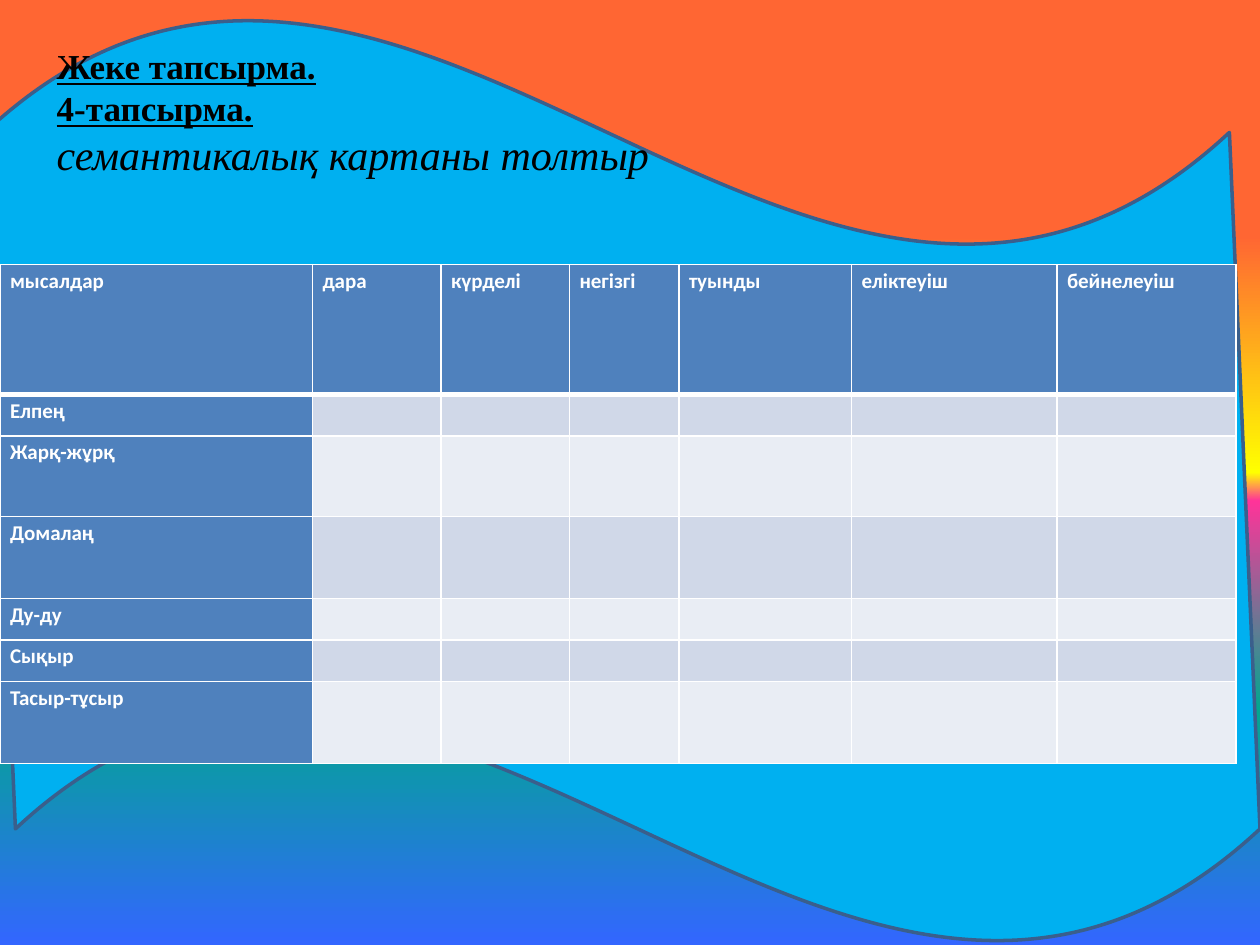
from dataclasses import dataclass

from lxml.etree import SubElement
from pptx import Presentation
from pptx.dml.color import RGBColor
from pptx.enum.shapes import MSO_SHAPE as Shape
from pptx.enum.text import MSO_ANCHOR as Anchor, MSO_AUTO_SIZE as AutoSize, PP_ALIGN as Align
from pptx.oxml.ns import qn
from pptx.util import Inches, Pt


@dataclass(frozen=True)
class Theme:
    heading_font: str = "Times New Roman"
    table_font: str = "Calibri"
    heading_size: int = 20
    task_size: int = 24
    table_size: int = 12
    ink: str = "000000"
    white: str = "FFFFFF"
    wave: str = "00B0F0"
    wave_edge: str = "3A5F8C"
    header: str = "4F81BD"
    bands: tuple = ("D0D8E8", "E9EDF4")
    sky: tuple = (
        (25, "FF6633", 100),
        (50, "FFFF00", 100),
        (53, "FF3399", 85),
        (75, "01A78F", 100),
        (100, "3366FF", 100),
    )


def write(paragraph, text, *, font, size, color, bold=False, italic=False,
          underline=False, spacing=None, after=None):
    paragraph.alignment = Align.LEFT
    if spacing is not None:
        paragraph.line_spacing = spacing
    if after is not None:
        paragraph.space_after = Pt(after)
    run = paragraph.add_run()
    run.text = text
    run.font.name = font
    run.font.size = Pt(size)
    run.font.bold = bold
    run.font.italic = italic
    run.font.underline = underline
    run.font.color.rgb = RGBColor.from_string(color)


def draw_border(cell, side, color, width):
    properties = cell._tc.get_or_add_tcPr()
    edge = SubElement(properties, qn(f"a:ln{side}"), w=str(Pt(width)))
    paint = SubElement(edge, qn("a:solidFill"))
    SubElement(paint, qn("a:srgbClr"), val=color)


class SlideBuilder:
    def __init__(self, slide, theme):
        self.slide = slide
        self.theme = theme

    def background(self):
        fill = self.slide.background.fill
        fill.gradient()
        fill.gradient_angle = 270
        stops = self.slide.element.find(f".//{qn('a:gsLst')}")
        for stop in list(stops):
            stops.remove(stop)
        for position, color, opacity in self.theme.sky:
            stop = SubElement(stops, qn("a:gs"), pos=str(position * 1000))
            paint = SubElement(stop, qn("a:srgbClr"), val=color)
            if opacity < 100:
                SubElement(paint, qn("a:alpha"), val=str(opacity * 1000))

    def wave(self, left, top, width, height):
        wave = self.slide.shapes.add_shape(
            Shape.WAVE, Inches(left), Inches(top), Inches(width), Inches(height))
        wave.adjustments[0] = 0.125
        wave.adjustments[1] = 0.012
        wave.shadow.inherit = False
        wave.fill.solid()
        wave.fill.fore_color.rgb = RGBColor.from_string(self.theme.wave)
        wave.line.color.rgb = RGBColor.from_string(self.theme.wave_edge)
        wave.line.width = Pt(2)

    def table(self, left, top, widths, heights, headers, examples):
        theme = self.theme
        table = self.slide.shapes.add_table(
            len(heights), len(widths), Inches(left), Inches(top),
            Inches(sum(widths)), Inches(sum(heights))).table
        table.first_col = True
        for column, width in zip(table.columns, widths):
            column.width = Inches(width)
        for row, height in zip(table.rows, heights):
            row.height = Inches(height)
        for r in range(len(heights)):
            for c in range(len(widths)):
                is_label = r == 0 or c == 0
                color = theme.header if is_label else theme.bands[(r - 1) % 2]
                self.cell(table.cell(r, c), color, r)
        for c, header in enumerate(headers):
            self.label(table.cell(0, c), header, after=15)
        for r, example in enumerate(examples, 1):
            self.label(table.cell(r, 0), example)

    def cell(self, cell, color, row):
        cell.margin_left = cell.margin_right = Inches(0.08)
        cell.margin_top = cell.margin_bottom = 0
        for side in "LRTB":
            under_header = (row, side) in ((0, "B"), (1, "T"))
            draw_border(cell, side, self.theme.white, 3 if under_header else 1)
        cell.fill.solid()
        cell.fill.fore_color.rgb = RGBColor.from_string(color)

    def label(self, cell, text, after=0):
        write(cell.text_frame.paragraphs[0], text, font=self.theme.table_font,
              size=self.theme.table_size, color=self.theme.white, bold=True,
              spacing=1.15, after=after)

    def title(self, left, top, width, height, headings, task):
        theme = self.theme
        title = self.slide.shapes.title
        title.left, title.top = Inches(left), Inches(top)
        title.width, title.height = Inches(width), Inches(height)
        title.element.getparent().append(title.element)
        frame = title.text_frame
        frame.word_wrap = True
        frame.auto_size = AutoSize.SHAPE_TO_FIT_TEXT
        frame.vertical_anchor = Anchor.MIDDLE
        paragraph = frame.paragraphs[0]
        for heading in headings:
            write(paragraph, heading, font=theme.heading_font, size=theme.heading_size,
                  color=theme.ink, bold=True, underline=True)
            paragraph = frame.add_paragraph()
        write(paragraph, task, font=theme.heading_font, size=theme.task_size,
              color=theme.ink, italic=True)


def main():
    deck = Presentation()
    deck.slide_width, deck.slide_height = Inches(10), Inches(7.5)
    title_only = deck.slide_layouts[5]
    builder = SlideBuilder(deck.slides.add_slide(title_only), Theme())
    builder.background()
    builder.wave(-0.12, 0.13, 10.12, 7.37)
    builder.table(
        0, 2.1,
        widths=(2.48, 1.02, 1.02, 0.87, 1.37, 1.63, 1.42),
        heights=(1.03, 0.33, 0.64, 0.65, 0.33, 0.33, 0.65),
        headers=("мысалдар", "дара", "күрделі", "негізгі", "туынды",
                 "еліктеуіш", "бейнелеуіш"),
        examples=("Елпең", "Жарқ-жұрқ", "Домалаң", "Ду-ду", "Сықыр", "Тасыр-тұсыр"))
    builder.title(
        0.35, 0.3, 12.97, 1.18,
        headings=("Жеке тапсырма.", "4-тапсырма."),
        task="семантикалық картаны толтыр")
    deck.save("out.pptx")


if __name__ == "__main__":
    main()
